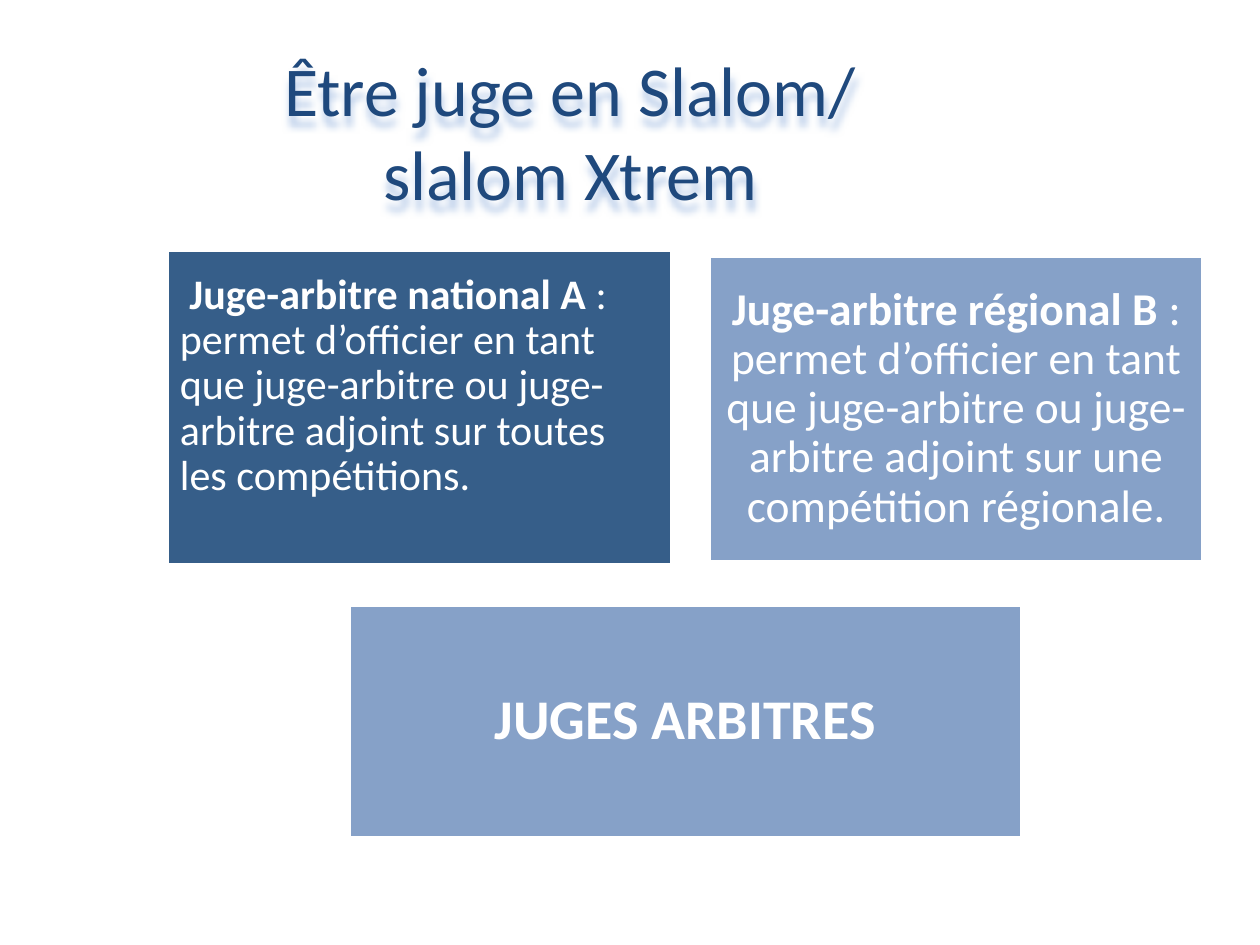
from lxml import etree
from pptx import Presentation
from pptx.dml.color import RGBColor
from pptx.enum.shapes import MSO_SHAPE
from pptx.enum.text import MSO_ANCHOR, MSO_AUTO_SIZE, PP_ALIGN
from pptx.oxml import parse_xml
from pptx.util import Inches, Pt

RECTANGLE = MSO_SHAPE.RECTANGLE
TOP, MIDDLE = MSO_ANCHOR.TOP, MSO_ANCHOR.MIDDLE
NO_FIT = MSO_AUTO_SIZE.NONE
LEFT, CENTER = PP_ALIGN.LEFT, PP_ALIGN.CENTER
WIDTH, HEIGHT = 10, 7.5
FONT = "Calibri"
WHITE, NAVY, DARK, LIGHT = "FFFFFF", "1F497D", "365E89", "86A1C8"
SHADOW = (
    '<a:effectLst xmlns:a="http://schemas.openxmlformats.org/drawingml/2006/main">'
    '<a:outerShdw blurRad="50800" dist="63500" dir="5400000" algn="tl" rotWithShape="0">'
    '<a:srgbClr val="B8CCE9"/></a:outerShdw></a:effectLst>'
)

TITLE_BOX = (0.108, 0.043, 0.689, 0.192)
CARDS = [
    {"box": (0.133, 0.265, 0.4, 0.333), "color": DARK, "size": 24, "inset": 0.1,
     "below": 0.34, "align": LEFT,
     "spans": [(" Juge-arbitre national A ", True),
               (": permet d’officier en tant que juge-arbitre ou juge-arbitre adjoint "
                "sur toutes les compétitions.", False)]},
    {"box": (0.563, 0.271, 0.392, 0.324), "color": LIGHT, "size": 26, "inset": 0.11,
     "below": 0, "align": CENTER,
     "spans": [("Juge-arbitre régional B ", True),
               (": permet d’officier en tant que juge-arbitre ou juge-arbitre adjoint "
                "sur une compétition régionale.", False)]},
    {"box": (0.277, 0.64, 0.534, 0.247), "color": LIGHT, "size": 32, "inset": 0.13,
     "below": 0, "align": CENTER, "spans": [("JUGES ARBITRES", True)]},
]


def rgb(value):
    return RGBColor.from_string(value)


def apply(target, values):
    for name, value in values.items():
        setattr(target, name, value)


def place(box):
    return [Inches(share * side) for share, side in zip(box, (WIDTH, HEIGHT) * 2)]


def add_span(para, text, size, color, bold):
    span = para.add_run()
    span.text = text
    apply(span.font, {"name": FONT, "size": Pt(size), "bold": bold})
    span.font.color.rgb = rgb(color)


def add_title(page, box, lines):
    title = page.shapes.title
    apply(title, dict(zip(("left", "top", "width", "height"), place(box))))
    frame = title.text_frame
    apply(frame, {"word_wrap": True, "auto_size": NO_FIT, "vertical_anchor": TOP})
    for number, line in enumerate(lines):
        para = frame.add_paragraph() if number else frame.paragraphs[0]
        para.alignment = CENTER
        add_span(para, line, 40, NAVY, False)
    etree.ElementBase.append(title.element.spPr, parse_xml(SHADOW))


def add_card(page, box, color, size, inset, below, align, spans):
    card = page.shapes.add_shape(RECTANGLE, *place(box))
    card.shadow.inherit = False
    card.fill.solid()
    card.fill.fore_color.rgb = rgb(color)
    card.line.color.rgb = rgb(WHITE)
    card.line.width = Pt(2)
    frame = card.text_frame
    margin = Inches(inset)
    apply(frame, {"word_wrap": True, "vertical_anchor": MIDDLE,
                  "margin_left": margin, "margin_right": margin,
                  "margin_top": margin, "margin_bottom": Inches(inset + below)})
    para = frame.paragraphs[0]
    apply(para, {"alignment": align, "line_spacing": 0.9})
    for text, bold in spans:
        add_span(para, text, size, WHITE, bold)


def main():
    deck = Presentation()
    apply(deck, {"slide_width": Inches(WIDTH), "slide_height": Inches(HEIGHT)})
    page = deck.slides.add_slide(deck.slide_layouts[5])
    add_title(page, TITLE_BOX, ["Être juge en Slalom/", "slalom Xtrem"])
    for card in CARDS:
        add_card(page, **card)
    deck.save("out.pptx")


if __name__ == "__main__":
    main()
